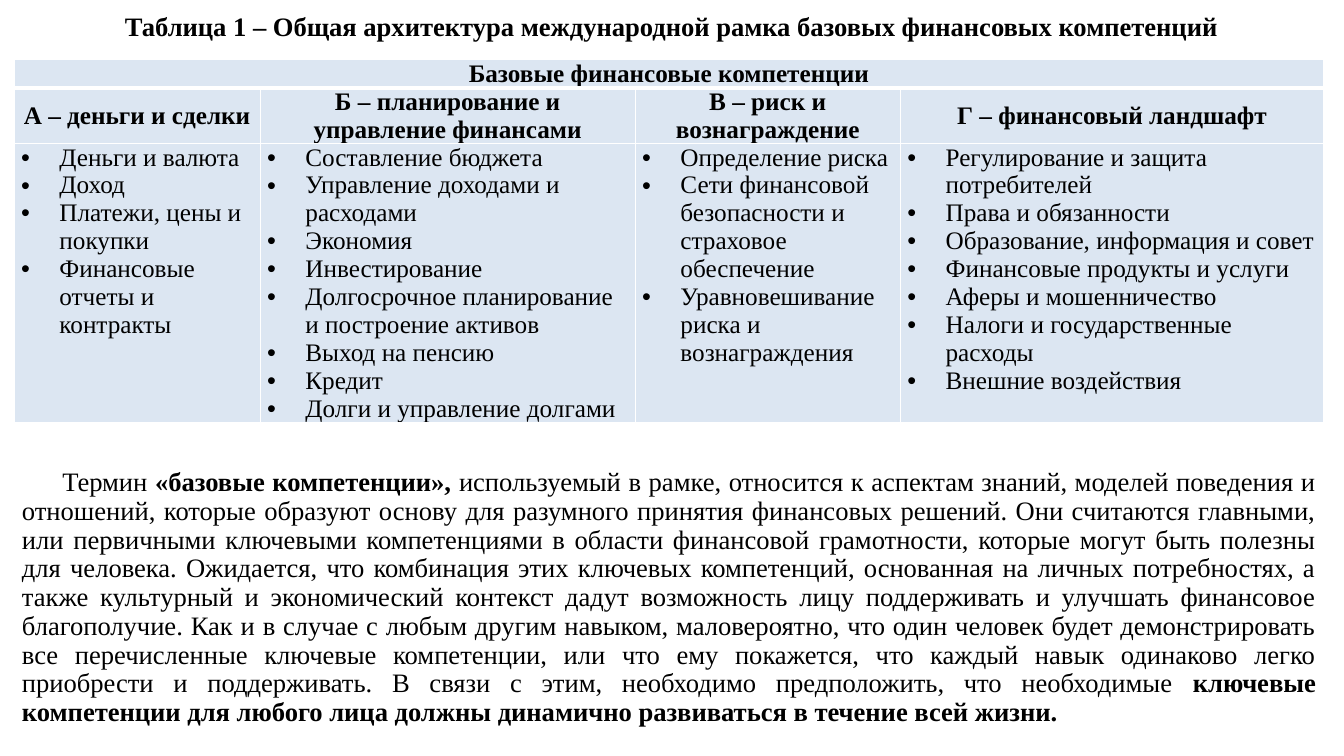
from typing import NamedTuple

import pptx
import pptx.dml.color
import pptx.enum.text
import pptx.oxml
import pptx.oxml.ns
import pptx.util
from pptx.util import Inches

FONT = "Times New Roman"
COLORS = {"text": "000000", "cell": "DCE6F2", "border": "FFFFFF"}
ALIGN = pptx.enum.text.PP_ALIGN
ANCHOR = pptx.enum.text.MSO_ANCHOR


class Competence(NamedTuple):
    heading: str
    width: float
    topics: list[str]


class Passage(NamedTuple):
    text: str
    bold: bool


TITLE = "Таблица 1 – Общая архитектура международной рамка базовых финансовых компетенций"
TABLE_HEADING = "Базовые финансовые компетенции"
ROW_HEIGHTS = [0.28, 0.55, 2.76]
COMPETENCES = [
    Competence("А – деньги и сделки", 2.44, [
        "Деньги и валюта", "Доход", "Платежи, цены и покупки",
        "Финансовые отчеты и контракты"]),
    Competence("Б – планирование и управление финансами", 3.72, [
        "Составление бюджета", "Управление доходами и расходами", "Экономия",
        "Инвестирование", "Долгосрочное планирование и построение активов",
        "Выход на пенсию", "Кредит", "Долги и управление долгами"]),
    Competence("В – риск и вознаграждение", 2.63, [
        "Определение риска", "Сети финансовой безопасности и страховое обеспечение",
        "Уравновешивание риска и вознаграждения"]),
    Competence("Г – финансовый ландшафт", 4.2, [
        "Регулирование и защита потребителей", "Права и обязанности",
        "Образование, информация и совет", "Финансовые продукты и услуги",
        "Аферы и мошенничество", "Налоги и государственные расходы",
        "Внешние воздействия"]),
]
PASSAGES = [
    Passage("Термин ", False),
    Passage("«базовые компетенции», ", True),
    Passage(
        "используемый в рамке, относится к аспектам знаний, моделей поведения и отношений, "
        "которые образуют основу для разумного принятия финансовых решений. Они считаются "
        "главными, или первичными ключевыми компетенциями в области финансовой грамотности, "
        "которые могут быть полезны для человека. Ожидается, что комбинация этих ключевых "
        "компетенций, основанная на личных потребностях, а также культурный и экономический "
        "контекст дадут возможность лицу поддерживать и улучшать финансовое благополучие. "
        "Как и в случае с любым другим навыком, маловероятно, что один человек будет "
        "демонстрировать все перечисленные ключевые компетенции, или что ему покажется, что "
        "каждый навык одинаково легко приобрести и поддерживать. В связи с этим, необходимо "
        "предположить, что необходимые ", False),
    Passage("ключевые компетенции для любого лица должны динамично развиваться "
            "в течение всей жизни.", True),
]


def format_run(r, size: float, bold: bool) -> None:
    r.font.name = FONT
    r.font.size = pptx.util.Pt(size)
    r.font.bold = bold
    r.font.color.rgb = pptx.dml.color.RGBColor.from_string(COLORS["text"])


def add_bullet(p) -> None:
    pPr = p._p.get_or_add_pPr()
    pPr.set("marL", str(Inches(0.38)))
    pPr.set("indent", str(Inches(-0.38)))
    ns = pptx.oxml.ns.nsdecls("a")
    pPr.append(pptx.oxml.parse_xml(f'<a:buFont {ns} typeface="Arial"/>'))
    pPr.append(pptx.oxml.parse_xml(f'<a:buChar {ns} char="•"/>'))


def set_borders(cell, bottom: float) -> None:
    tcPr = cell._tc.get_or_add_tcPr()
    sides = {"lnL": 1, "lnR": 1, "lnT": 1, "lnB": bottom}
    for i, (side, width) in enumerate(sides.items()):
        tcPr.insert(i, pptx.oxml.parse_xml(
            f'<a:{side} {pptx.oxml.ns.nsdecls("a")} w="{pptx.util.Pt(width)}"><a:solidFill>'
            f'<a:srgbClr val="{COLORS["border"]}"/></a:solidFill></a:{side}>'))


def fill_cell(cell, lines: list[str], heading: bool, bottom: float = 1) -> None:
    cell.margin_left = cell.margin_right = Inches(0.07)
    cell.margin_top = cell.margin_bottom = 0
    cell.vertical_anchor = ANCHOR.MIDDLE if heading else ANCHOR.TOP
    cell.fill.solid()
    cell.fill.fore_color.rgb = pptx.dml.color.RGBColor.from_string(COLORS["cell"])
    set_borders(cell, bottom)
    cell.text_frame.text = "\n".join(lines)
    for p in cell.text_frame.paragraphs:
        if heading:
            p.alignment = ALIGN.CENTER
        else:
            add_bullet(p)
        for r in p.runs:
            format_run(r, 18, heading)


def add_title(slide) -> None:
    sp = slide.shapes.title
    sp.left, sp.top, sp.width, sp.height = map(Inches, (0.4, 0.05, 12.52, 0.42))
    tf = sp.text_frame
    tf.text = TITLE
    tf.auto_size = pptx.enum.text.MSO_AUTO_SIZE.NONE
    tf.vertical_anchor = ANCHOR.MIDDLE
    tf.paragraphs[0].alignment = ALIGN.CENTER
    format_run(tf.paragraphs[0].runs[0], 19, True)


def add_competence_table(slide) -> None:
    width = sum(c.width for c in COMPETENCES)
    table = slide.shapes.add_table(
        len(ROW_HEIGHTS), len(COMPETENCES), Inches(0.14), Inches(0.59),
        Inches(width), Inches(sum(ROW_HEIGHTS))).table
    for row, height in zip(table.rows, ROW_HEIGHTS):
        row.height = Inches(height)
    for i, competence in enumerate(COMPETENCES):
        table.columns[i].width = Inches(competence.width)
        fill_cell(table.cell(0, i), [TABLE_HEADING] if i == 0 else [], True, bottom=3)
        fill_cell(table.cell(1, i), [competence.heading], True)
        fill_cell(table.cell(2, i), competence.topics, False)
    table.cell(0, 0).merge(table.cell(0, len(COMPETENCES) - 1))


def add_explanation(slide) -> None:
    sp = slide.shapes.add_textbox(*map(Inches, (0.12, 4.6, 13.03, 2.69)))
    tf = sp.text_frame
    tf.word_wrap = True
    p = tf.paragraphs[0]
    p.alignment = ALIGN.JUSTIFY
    p.line_spacing = 0.9
    p._p.get_or_add_pPr().set("indent", str(Inches(0.4)))
    for passage in PASSAGES:
        r = p.add_run()
        r.text = passage.text
        format_run(r, 19, passage.bold)


def main() -> None:
    prs = pptx.Presentation()
    prs.slide_width, prs.slide_height = Inches(13.33), Inches(7.5)
    slide = prs.slides.add_slide(prs.slide_layouts[5])
    # Title above the table
    add_title(slide)
    # Four competence areas with their topics
    add_competence_table(slide)
    # Explanation of the term
    add_explanation(slide)
    prs.save("out.pptx")


if __name__ == "__main__":
    main()
